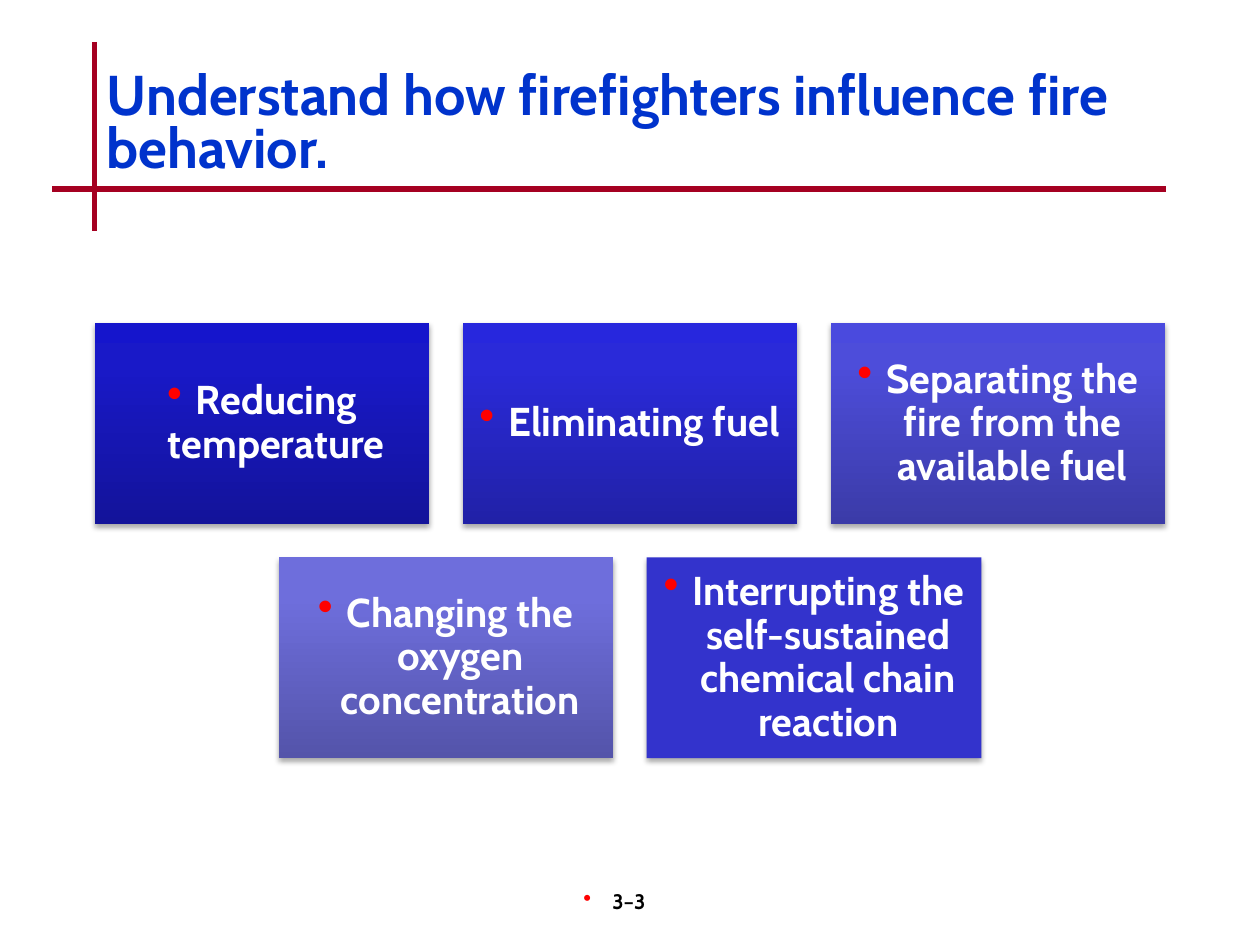
from copy import deepcopy

from lxml.etree import SubElement
from pptx import Presentation
from pptx.dml.color import RGBColor
from pptx.enum.shapes import MSO_CONNECTOR, MSO_SHAPE
from pptx.enum.text import MSO_ANCHOR, PP_ALIGN
from pptx.oxml.ns import qn
from pptx.util import Pt

COLORS = {"title": "0033CC", "rule": "A50021", "bullet": "FF0000", "card": "3333CC",
          "card_text": "FFFFFF", "footer": "000000", "shadow": "000000"}
FONT = "Cabin"
CARD_ROWS = [
    [("Reducing temperature", ["13139A", "1919C8", "1515CC"]),
     ("Eliminating fuel", ["2121A7", "2A2AD9", "2727DD"]),
     ("Separating the fire from the available fuel", ["3B3BA8", "4D4DDA", "4A4ADE"])],
    [("Changing the oxygen concentration", ["5454AA", "6E6EDC", "6C6CDF"]),
     ("Interrupting the self-sustained chemical chain reaction", None)],
]
GRADIENT_POSITIONS = [0, 0.8, 1]
SLIDE_WIDTH, SLIDE_HEIGHT = 720, 540
CARD_WIDTH, CARD_HEIGHT, CARD_GAP = 191.25, 114.75, 19.12
CARDS_TOP = 184.7


class SlideBuilder:
    """Draws styled elements, measured in points, on one slide."""

    def __init__(self, slide):
        self.slide = slide

    def rule(self, x1, y1, x2, y2):
        line = self.slide.shapes.add_connector(
            MSO_CONNECTOR.STRAIGHT, Pt(x1), Pt(y1), Pt(x2), Pt(y2))
        line.line.color.rgb = RGBColor.from_string(COLORS["rule"])
        line.line.width = Pt(3)
        SubElement(line._element.spPr, qn("a:effectLst"))

    def set_text(self, shape, text, size, color, anchor, align, spacing=1.0, bullet=None):
        frame = shape.text_frame
        frame.word_wrap = True
        frame.vertical_anchor = anchor
        paragraph = frame.paragraphs[0]
        paragraph.text = text
        paragraph.alignment = align
        paragraph.line_spacing = spacing
        if bullet:
            self.bullet(paragraph, *bullet)
        font = paragraph.font
        font.name, font.size, font.bold = FONT, Pt(size), True
        font.color.rgb = RGBColor.from_string(COLORS[color])

    def bullet(self, paragraph, margin, indent):
        properties = paragraph._p.get_or_add_pPr()
        properties.set("marL", str(Pt(margin)))
        properties.set("indent", str(Pt(indent)))
        bullet_color = SubElement(properties, qn("a:buClr"))
        SubElement(bullet_color, qn("a:srgbClr"), val=COLORS["bullet"])
        SubElement(properties, qn("a:buSzPct"), val="110000")
        SubElement(properties, qn("a:buChar"), char="•")

    def text(self, left, top, width, height, *content, **style):
        box = self.slide.shapes.add_textbox(Pt(left), Pt(top), Pt(width), Pt(height))
        self.set_text(box, *content, **style)

    def gradient(self, shape, colors):
        shape.fill.gradient()
        shape.fill.gradient_angle = 90
        stop_list = next(shape._element.spPr.iter(qn("a:gsLst")))
        stop_list.append(deepcopy(stop_list[-1]))
        for stop, position, color in zip(shape.fill.gradient_stops, GRADIENT_POSITIONS, colors):
            stop.position = position
            stop.color.rgb = RGBColor.from_string(color)

    def shadow(self, shape):
        shape.shadow.inherit = False
        effects = shape._element.spPr.find(qn("a:effectLst"))
        outer = SubElement(effects, qn("a:outerShdw"), blurRad=str(Pt(3.1)),
                           dist=str(Pt(1.8)), dir="5400000", rotWithShape="0")
        color = SubElement(outer, qn("a:srgbClr"), val=COLORS["shadow"])
        SubElement(color, qn("a:alpha"), val="35000")

    def card(self, left, top, text, colors):
        shape = self.slide.shapes.add_shape(
            MSO_SHAPE.RECTANGLE, Pt(left), Pt(top), Pt(CARD_WIDTH), Pt(CARD_HEIGHT))
        if colors:
            self.gradient(shape, colors)
        else:
            shape.fill.solid()
            shape.fill.fore_color.rgb = RGBColor.from_string(COLORS["card"])
        shape.line.fill.background()
        self.shadow(shape)
        frame = shape.text_frame
        frame.margin_left = frame.margin_right = Pt(7.2)
        frame.margin_top = frame.margin_bottom = Pt(7.2)
        self.set_text(shape, text, 23, "card_text", MSO_ANCHOR.MIDDLE, PP_ALIGN.CENTER,
                      spacing=0.9, bullet=(16.5, -16.5))


def main():
    presentation = Presentation()
    presentation.slide_width, presentation.slide_height = Pt(SLIDE_WIDTH), Pt(SLIDE_HEIGHT)
    builder = SlideBuilder(presentation.slides.add_slide(presentation.slide_layouts[6]))
    builder.rule(54, 24, 54, 132)
    builder.rule(30, 108, 666, 108)
    builder.text(282, 504, 150, 36, "3–3", 12, "footer", MSO_ANCHOR.TOP,
                 PP_ALIGN.CENTER, bullet=(4, -16.5))
    builder.text(54, 36, 612, 72, "Understand how firefighters influence fire behavior.",
                 32, "title", MSO_ANCHOR.MIDDLE, PP_ALIGN.LEFT, spacing=0.8)
    for row, cards in enumerate(CARD_ROWS):
        row_width = len(cards) * (CARD_WIDTH + CARD_GAP) - CARD_GAP
        left = (SLIDE_WIDTH - row_width) / 2
        top = CARDS_TOP + row * (CARD_HEIGHT + CARD_GAP)
        for column, (text, colors) in enumerate(cards):
            builder.card(left + column * (CARD_WIDTH + CARD_GAP), top, text, colors)
    presentation.save("out.pptx")


if __name__ == "__main__":
    main()
